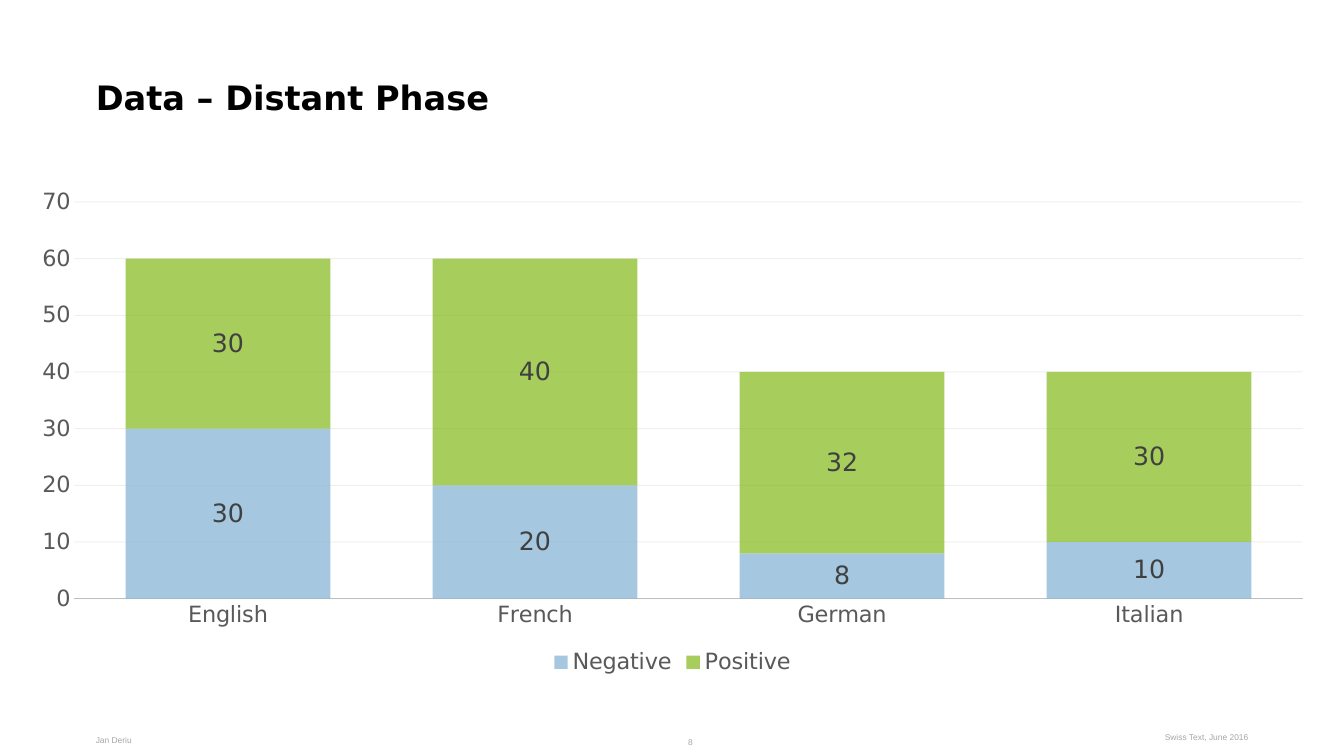
from lxml import etree
from pptx import Presentation
from pptx.chart.data import CategoryChartData
from pptx.dml.color import RGBColor
from pptx.enum.chart import (XL_CHART_TYPE, XL_LABEL_POSITION,
                             XL_LEGEND_POSITION, XL_TICK_MARK)
from pptx.enum.text import MSO_ANCHOR, PP_ALIGN
from pptx.oxml.ns import qn
from pptx.util import Inches, Pt

STACKED = XL_CHART_TYPE.COLUMN_STACKED
CENTER = XL_LABEL_POSITION.CENTER
BOTTOM = XL_LEGEND_POSITION.BOTTOM
NO_TICK = XL_TICK_MARK.NONE
TOP = MSO_ANCHOR.TOP
LEFT, RIGHT = PP_ALIGN.LEFT, PP_ALIGN.RIGHT

BLACK = RGBColor(0x00, 0x00, 0x00)
DARK = RGBColor(0x40, 0x40, 0x40)
GRAY = RGBColor(0x59, 0x59, 0x59)
PALE = RGBColor(0xA6, 0xA6, 0xA6)
AXIS = RGBColor(0xBF, 0xBF, 0xBF)
GRID = RGBColor(0xD9, 0xD9, 0xD9)
BLUE = RGBColor(0x80, 0xB2, 0xD3)
GREEN = RGBColor(0x83, 0xB8, 0x19)

LANGS = ["English", "French", "German", "Italian"]
SERIES = [("Negative", [30, 20, 8, 10], BLUE),
          ("Positive", [30, 40, 32, 30], GREEN)]


class Deck:
    """Holds the style and the current slide."""
    main, small = "DejaVu Sans", "Arial"

    def __init__(self):
        self.prs = Presentation()
        self.prs.slide_width = Inches(13.33)
        self.prs.slide_height = Inches(7.5)
        self.slide = self.prs.slides.add_slide(self.prs.slide_layouts[5])

    def font(self, font, name, size, color, bold=False):
        font.name, font.size, font.bold = name, Pt(size), bold
        font.color.rgb = color

    def fade(self, part, percent):
        """Make a solid fill or line partly transparent."""
        for color in part.iter(qn("a:srgbClr")):
            etree.SubElement(color, qn("a:alpha"), val=str(percent * 1000))

    def label(self, shape, text, align, inset):
        frame = shape.text_frame
        frame.word_wrap = True
        frame.vertical_anchor = TOP
        frame.margin_left = frame.margin_right = Inches(inset)
        frame.margin_top = frame.margin_bottom = Inches(inset / 2)
        frame.text = text
        para = frame.paragraphs[0]
        para.alignment = align
        return para.font

    def title(self, text, x, y, w, h):
        shape = self.slide.shapes.title
        shape.left, shape.top = Inches(x), Inches(y)
        shape.width, shape.height = Inches(w), Inches(h)
        font = self.label(shape, text, LEFT, 0)
        self.font(font, self.main, 24, BLACK, True)

    def note(self, text, x, y, w, h, align, inset=0):
        box = self.slide.shapes.add_textbox(
            Inches(x), Inches(y), Inches(w), Inches(h))
        font = self.label(box, text, align, inset)
        self.font(font, self.small, 6, PALE)

    def axis(self, axis):
        axis.major_tick_mark = axis.minor_tick_mark = NO_TICK
        self.font(axis.tick_labels.font, self.main, 16, GRAY)

    def chart(self, cats, series, x, y, w, h):
        data = CategoryChartData()
        data.categories = cats
        for name, vals, _ in series:
            data.add_series(name, vals)
        chart = self.slide.shapes.add_chart(
            STACKED, Inches(x), Inches(y), Inches(w), Inches(h), data).chart
        chart.has_title = False
        self.font(chart.font, self.main, 16, BLACK)

        # Axes and grid
        base, scale = chart.category_axis, chart.value_axis
        self.axis(base)
        self.axis(scale)
        scale.minimum_scale, scale.maximum_scale = 0, 70
        scale.major_unit = 10
        scale.format.line.fill.background()
        grid = scale.major_gridlines.format.line
        for line, color in ((base.format.line, AXIS), (grid, GRID)):
            line.color.rgb, line.width = color, Pt(0.75)
        self.fade(scale._element.find(qn("c:majorGridlines")), 40)

        # Legend
        chart.has_legend = True
        chart.legend.position = BOTTOM
        chart.legend.include_in_layout = False
        self.font(chart.legend.font, self.main, 16, GRAY)

        # Bars and values
        plot = chart.plots[0]
        plot.gap_width, plot.overlap = 50, 100
        plot.vary_by_categories = False
        for bars, (_, _, color) in zip(plot.series, series):
            bars.format.fill.solid()
            bars.format.fill.fore_color.rgb = color
            self.fade(bars._element.find(qn("c:spPr")), 70)
            labels = bars.data_labels
            labels.show_value = True
            labels.position = CENTER
            self.font(labels.font, self.main, 18, DARK)


def main():
    deck = Deck()
    deck.title("Data – Distant Phase", 0.95, 0.76, 9.3, 0.85)
    deck.chart(LANGS, SERIES, 0.16, 1.78, 13.02, 4.96)
    # Footer
    deck.note("Jan Deriu", 0.95, 7.29, 1.28, 0.24, LEFT)
    deck.note("8", 5.5, 7.26, 1.47, 0.19, RIGHT, 0.1)
    deck.note("Swiss Text, June 2016", 11.1, 7.26, 1.28, 0.24, RIGHT)
    deck.prs.save("out.pptx")


if __name__ == "__main__":
    main()
